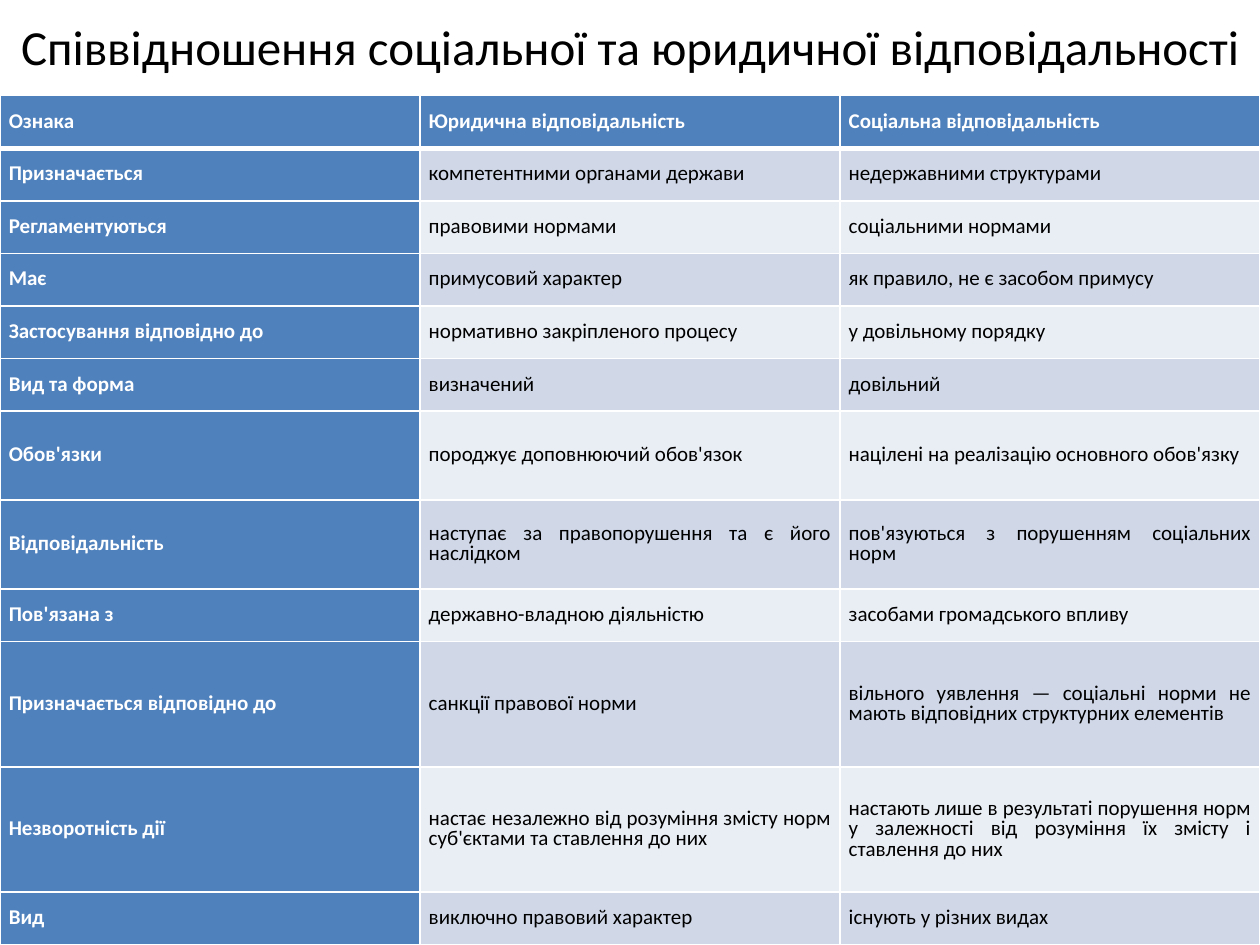
"""Build a slide comparing legal and social responsibility in a table."""
from lxml.etree import SubElement
from pptx import Presentation
from pptx.dml.color import RGBColor
from pptx.enum.text import MSO_ANCHOR as Anchor, PP_ALIGN as Align
from pptx.oxml.ns import qn
from pptx.util import Inches, Pt

TITLE = "Співвідношення соціальної та юридичної відповідальності"
ROWS = [
    ("Ознака", "Юридична відповідальність", "Соціальна відповідальність"),
    ("Призначається", "компетентними органами держави", "недержавними структурами"),
    ("Регламентуються", "правовими нормами", "соціальними нормами"),
    ("Має", "примусовий характер", "як правило, не є засобом примусу"),
    ("Застосування відповідно до", "нормативно закріпленого процесу", "у довільному порядку"),
    ("Вид та форма", "визначений", "довільний"),
    ("Обов'язки", "породжує доповнюючий обов'язок",
     "націлені на реалізацію основного обов'язку"),
    ("Відповідальність", "наступає за правопорушення та є його наслідком",
     "пов'язуються з порушенням соціальних норм"),
    ("Пов'язана з", "державно-владною діяльністю", "засобами громадського впливу"),
    ("Призначається відповідно до", "санкції правової норми",
     "вільного уявлення — соціальні норми не мають відповідних структурних елементів"),
    ("Незворотність дії",
     "настає незалежно від розуміння змісту норм суб'єктами та ставлення до них",
     "настають лише в результаті порушення норм у залежності від розуміння їх змісту "
     "і ставлення до них"),
    ("Вид", "виключно правовий характер", "існують у різних видах"),
]
COLORS = {"header": "4F81BD", "odd": "D0D8E8", "even": "E9EDF4",
          "white": "FFFFFF", "black": "000000"}
FONT = "Calibri"
SLIDE_WIDTH, SLIDE_HEIGHT = 10, 7.5
TABLE_TOP = 0.76
BASE_HEIGHT = 0.42
TALL_HEIGHTS = {6: 0.71, 7: 0.71, 9: 1, 10: 1}


def format_paragraph(paragraph, size, color, bold, alignment):
    paragraph.alignment = alignment
    paragraph.line_spacing = 0.8
    paragraph.font.name = FONT
    paragraph.font.size = Pt(size)
    paragraph.font.bold = bold
    paragraph.font.color.rgb = RGBColor.from_string(COLORS[color])


def add_borders(cell, widths):
    properties = cell._tc.get_or_add_tcPr()
    for index, (side, width) in enumerate(widths.items()):
        line = SubElement(properties, qn(f"a:ln{side}"), w=str(Pt(width)))
        fill = SubElement(line, qn("a:solidFill"))
        SubElement(fill, qn("a:srgbClr"), val=COLORS["white"])
        properties.insert(index, line)


def format_cell(cell, text, row, column):
    is_header = row == 0 or column == 0
    band = "odd" if row % 2 else "even"
    cell.text = text
    cell.vertical_anchor = Anchor.MIDDLE
    cell.margin_left = cell.margin_right = Inches(0.07)
    cell.margin_top = cell.margin_bottom = Inches(0.03)
    cell.fill.solid()
    cell.fill.fore_color.rgb = RGBColor.from_string(COLORS["header" if is_header else band])
    format_paragraph(cell.text_frame.paragraphs[0], 12,
                     "white" if is_header else "black", is_header, Align.JUSTIFY)
    add_borders(cell, {"L": 1, "R": 1, "T": 3 if row == 1 else 1, "B": 3 if row == 0 else 1})


def add_title(slide):
    title = slide.shapes.title
    title.left, title.top = Inches(0), Inches(0.13)
    title.width, title.height = Inches(SLIDE_WIDTH), Inches(0.55)
    title.text_frame.text = TITLE
    title.text_frame.vertical_anchor = Anchor.MIDDLE
    format_paragraph(title.text_frame.paragraphs[0], 28, "black", False, Align.CENTER)


def add_comparison(slide):
    table_height = SLIDE_HEIGHT - TABLE_TOP
    heights = [TALL_HEIGHTS.get(row, BASE_HEIGHT) for row in range(len(ROWS))]
    scale = table_height / sum(heights)
    table = slide.shapes.add_table(len(ROWS), len(ROWS[0]), Inches(0), Inches(TABLE_TOP),
                                   Inches(SLIDE_WIDTH), Inches(table_height)).table
    table.first_col = True
    for column in table.columns:
        column.width = Inches(SLIDE_WIDTH / len(ROWS[0]))
    for row, texts in enumerate(ROWS):
        table.rows[row].height = Inches(heights[row] * scale)
        for column, text in enumerate(texts):
            format_cell(table.cell(row, column), text, row, column)


def main():
    presentation = Presentation()
    presentation.slide_width = Inches(SLIDE_WIDTH)
    presentation.slide_height = Inches(SLIDE_HEIGHT)
    slide = presentation.slides.add_slide(presentation.slide_layouts[5])
    add_title(slide)
    add_comparison(slide)
    presentation.save("out.pptx")


if __name__ == "__main__":
    main()
